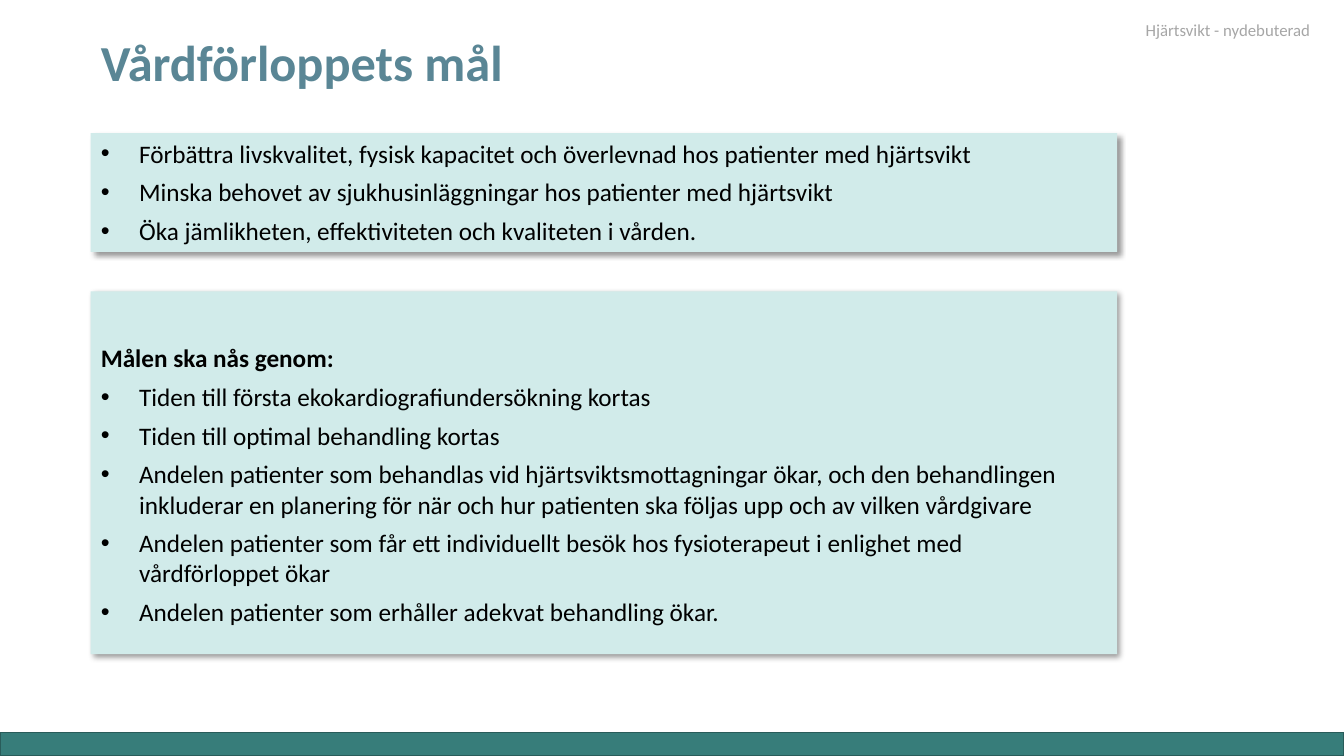
import pptx
import pptx.dml.color
import pptx.enum.shapes
import pptx.enum.text
import pptx.oxml
import pptx.oxml.ns
import pptx.util

WIDTH, HEIGHT = pptx.util.Inches(13.33), pptx.util.Inches(7.5)
FONT = "Calibri"
COLOURS = {
    "title": "5A8695",
    "text": "000000",
    "label": "A6A6A6",
    "panel": "D1EBEA",
    "band": "377D7A",
    "band_edge": "295C5A",
}
LEFT, PANEL_WIDTH = 6.75, 76.37
PANEL_INDENT = pptx.util.Inches(0.38)

GOALS = [
    "Förbättra livskvalitet, fysisk kapacitet och överlevnad hos patienter med hjärtsvikt",
    "Minska behovet av sjukhusinläggningar hos patienter med hjärtsvikt",
    "Öka jämlikheten, effektiviteten och kvaliteten i vården.",
]
MEANS_HEADING = "Målen ska nås genom:"
MEANS = [
    "Tiden till första ekokardiografiundersökning kortas",
    "Tiden till optimal behandling kortas",
    "Andelen patienter som behandlas vid hjärtsviktsmottagningar ökar, och den behandlingen "
    "inkluderar en planering för när och hur patienten ska följas upp och av vilken vårdgivare",
    "Andelen patienter som får ett individuellt besök hos fysioterapeut i enlighet med "
    "vårdförloppet ökar",
    "Andelen patienter som erhåller adekvat behandling ökar.",
]


def colour(name):
    return pptx.dml.color.RGBColor.from_string(COLOURS[name])


def area(left, top, width, height):
    """Turn percentages of the slide into lengths."""
    return [round(share * side / 100) for share, side in
            zip((left, top, width, height), (WIDTH, HEIGHT, WIDTH, HEIGHT))]


def place(shape, *percentages):
    shape.left, shape.top, shape.width, shape.height = area(*percentages)


def format_runs(para, size, colour_name, bold=False):
    para.alignment = pptx.enum.text.PP_ALIGN.LEFT
    for span in para.runs:
        span.font.name = FONT
        span.font.size = pptx.util.Pt(size)
        span.font.bold = bold
        span.font.color.rgb = colour(colour_name)


def set_bullet(para, bulleted):
    properties = para._p.get_or_add_pPr()
    indent = PANEL_INDENT if bulleted else 0
    properties.set("marL", str(indent))
    properties.set("indent", str(-indent))
    markup = '<a:buChar %s char="•"/>' if bulleted else "<a:buNone %s/>"
    properties.append(pptx.oxml.parse_xml(markup % pptx.oxml.ns.nsdecls("a")))


def add_soft_shadow(shape):
    shape._element.spPr.append(pptx.oxml.parse_xml(
        f'<a:effectLst {pptx.oxml.ns.nsdecls("a")}>'
        f'<a:outerShdw blurRad="{pptx.util.Pt(4)}" dist="{pptx.util.Pt(3)}" '
        'dir="2700000" algn="tl" rotWithShape="0">'
        '<a:srgbClr val="000000"><a:alpha val="40000"/></a:srgbClr>'
        '</a:outerShdw></a:effectLst>'))


def fill_title(title, text):
    place(title, LEFT, 4, 75, 8.93)
    frame = title.text_frame
    frame.text = text
    frame.word_wrap = True
    frame.auto_size = pptx.enum.text.MSO_AUTO_SIZE.NONE
    frame.vertical_anchor = pptx.enum.text.MSO_ANCHOR.BOTTOM
    frame.paragraphs[0].line_spacing = 0.9
    format_runs(frame.paragraphs[0], 36, "title", bold=True)


def fill_panel(panel, top, height, items, heading=None, top_inset=0.05):
    place(panel, LEFT, top, PANEL_WIDTH, height)
    panel.fill.solid()
    panel.fill.fore_color.rgb = colour("panel")
    panel.line.fill.background()
    add_soft_shadow(panel)
    frame = panel.text_frame
    frame.text = "\n".join(([heading] if heading else []) + items)
    frame.word_wrap = True
    frame.auto_size = pptx.enum.text.MSO_AUTO_SIZE.NONE
    frame.vertical_anchor = pptx.enum.text.MSO_ANCHOR.TOP
    frame.margin_top = pptx.util.Inches(top_inset)
    for index, para in enumerate(frame.paragraphs):
        is_heading = heading is not None and index == 0
        set_bullet(para, not is_heading)
        para.space_before = pptx.util.Pt(6 if index else 0)
        format_runs(para, 18, "text", bold=is_heading)


def add_topic_label(page, text):
    box = page.shapes.add_textbox(*area(84.5, 2, 14.25, 4))
    frame = box.text_frame
    frame.text = text
    frame.word_wrap = True
    format_runs(frame.paragraphs[0], 12, "label")


def add_band(page):
    band = page.shapes.add_shape(
        pptx.enum.shapes.MSO_SHAPE.RECTANGLE, *area(0, 96.93, 100, 3.07))
    band.shadow.inherit = False
    band.fill.solid()
    band.fill.fore_color.rgb = colour("band")
    band.line.color.rgb = colour("band_edge")
    band.line.width = pptx.util.Pt(1)


def main():
    deck = pptx.Presentation()
    deck.slide_width, deck.slide_height = WIDTH, HEIGHT
    two_content = deck.slide_layouts[3]
    page = deck.slides.add_slide(two_content)
    title, goals_panel, means_panel = page.placeholders

    fill_title(title, "Vårdförloppets mål")
    fill_panel(goals_panel, 17.6, 15.73, GOALS)
    fill_panel(means_panel, 38.53, 48, MEANS, MEANS_HEADING, top_inset=0.51)
    add_topic_label(page, "Hjärtsvikt - nydebuterad")
    add_band(page)
    deck.save("out.pptx")


if __name__ == "__main__":
    main()
